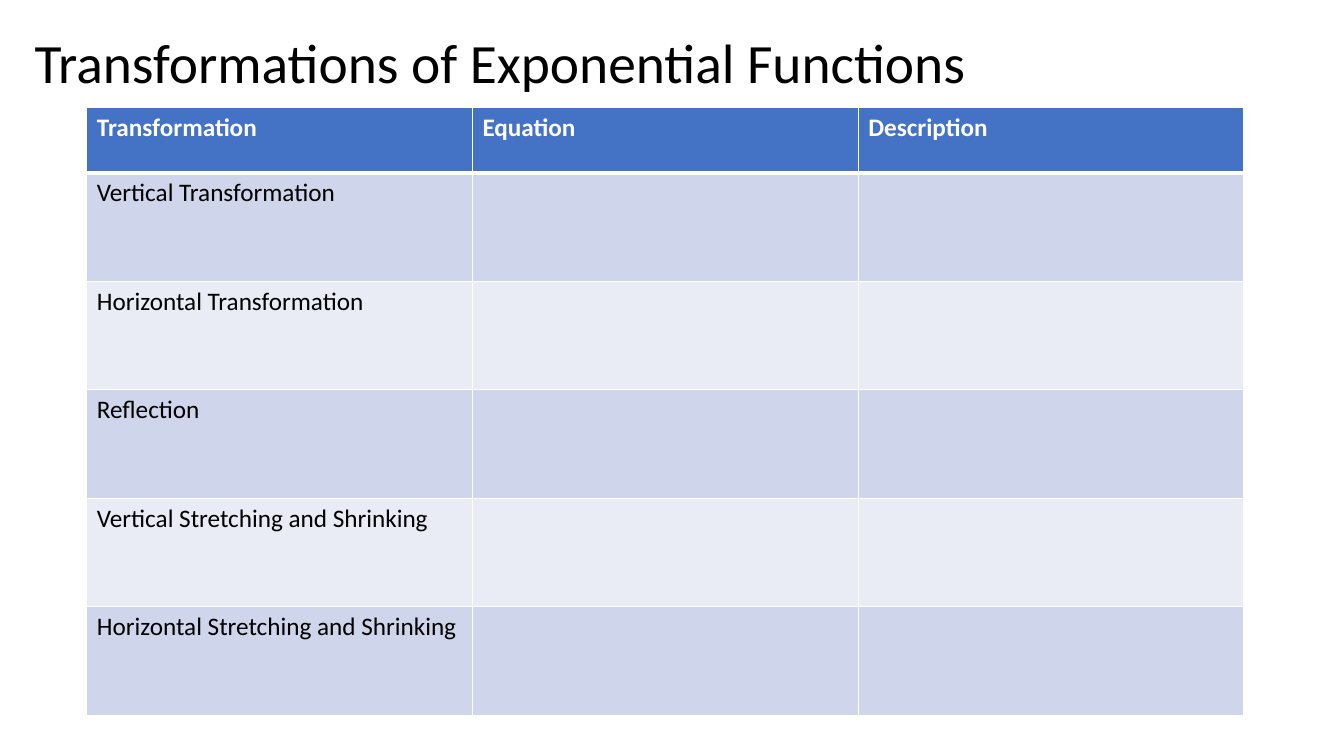
from lxml import etree
from pptx import Presentation
from pptx.dml.color import RGBColor
from pptx.enum.text import MSO_ANCHOR, MSO_AUTO_SIZE, PP_ALIGN
from pptx.oxml.ns import qn
from pptx.util import Pt

WHITE = RGBColor(0xFF, 0xFF, 0xFF)
BLACK = RGBColor(0x00, 0x00, 0x00)
HEADER_BLUE = RGBColor(0x44, 0x72, 0xC4)
BAND_DARK = RGBColor(0xCF, 0xD5, 0xEA)
BAND_LIGHT = RGBColor(0xE9, 0xEB, 0xF5)
FONT = "Calibri"

HEADINGS = ["Transformation", "Equation", "Description"]
TRANSFORMATIONS = [
    "Vertical Transformation",
    "Horizontal Transformation",
    "Reflection",
    "Vertical Stretching and Shrinking",
    "Horizontal Stretching and Shrinking",
]
HEADER_HEIGHT = 46.5


def add_run(paragraph, text, size, color, bold=False):
    run = paragraph.add_run()
    run.text = text
    run.font.name = FONT
    run.font.size = Pt(size)
    run.font.bold = bold
    run.font.color.rgb = color


def set_borders(cell, bottom_width):
    """Draw white cell borders, 1 pt wide except along the bottom."""
    properties = cell._tc.get_or_add_tcPr()
    widths = {"a:lnL": 1, "a:lnR": 1, "a:lnT": 1, "a:lnB": bottom_width}
    for position, (side, width) in enumerate(widths.items()):
        border = etree.Element(qn(side), w=str(Pt(width)))
        fill = etree.SubElement(border, qn("a:solidFill"))
        etree.SubElement(fill, qn("a:srgbClr"), val=str(WHITE))
        properties.insert(position, border)


def place_title(slide, left, top, width, height):
    title = slide.shapes.title
    title.left, title.top = Pt(left), Pt(top)
    title.width, title.height = Pt(width), Pt(height)
    frame = title.text_frame
    frame.word_wrap = True
    frame.auto_size = MSO_AUTO_SIZE.NONE
    frame.vertical_anchor = MSO_ANCHOR.MIDDLE
    heading = frame.paragraphs[0]
    heading.alignment = PP_ALIGN.LEFT
    heading.line_spacing = 0.9
    add_run(heading, "Transformations of Exponential Functions", 39.6, BLACK)


def add_transformation_table(slide, left, top, width, height):
    rows = [HEADINGS] + [[name, "", ""] for name in TRANSFORMATIONS]
    table = slide.shapes.add_table(
        len(rows), len(HEADINGS), Pt(left), Pt(top), Pt(width), Pt(height)
    ).table
    body_height = (height - HEADER_HEIGHT) / len(TRANSFORMATIONS)
    for column in table.columns:
        column.width = Pt(width / len(HEADINGS))
    for row_index, texts in enumerate(rows):
        is_header = row_index == 0
        table.rows[row_index].height = Pt(HEADER_HEIGHT if is_header else body_height)
        band = BAND_DARK if row_index % 2 else BAND_LIGHT
        for column_index, text in enumerate(texts):
            cell = table.cell(row_index, column_index)
            cell.fill.solid()
            cell.fill.fore_color.rgb = HEADER_BLUE if is_header else band
            set_borders(cell, 3 if is_header else 1)
            if text:
                add_run(cell.text_frame.paragraphs[0], text, 18,
                        WHITE if is_header else BLACK, bold=is_header)


def main():
    deck = Presentation()
    deck.slide_width, deck.slide_height = Pt(960), Pt(540)
    slide = deck.slides.add_slide(deck.slide_layouts.get_by_name("Title Only"))
    place_title(slide, 17.5, 28.8, 876, 36.7)
    add_transformation_table(slide, 62, 77, 826.5, 434)
    deck.save("out.pptx")


if __name__ == "__main__":
    main()
